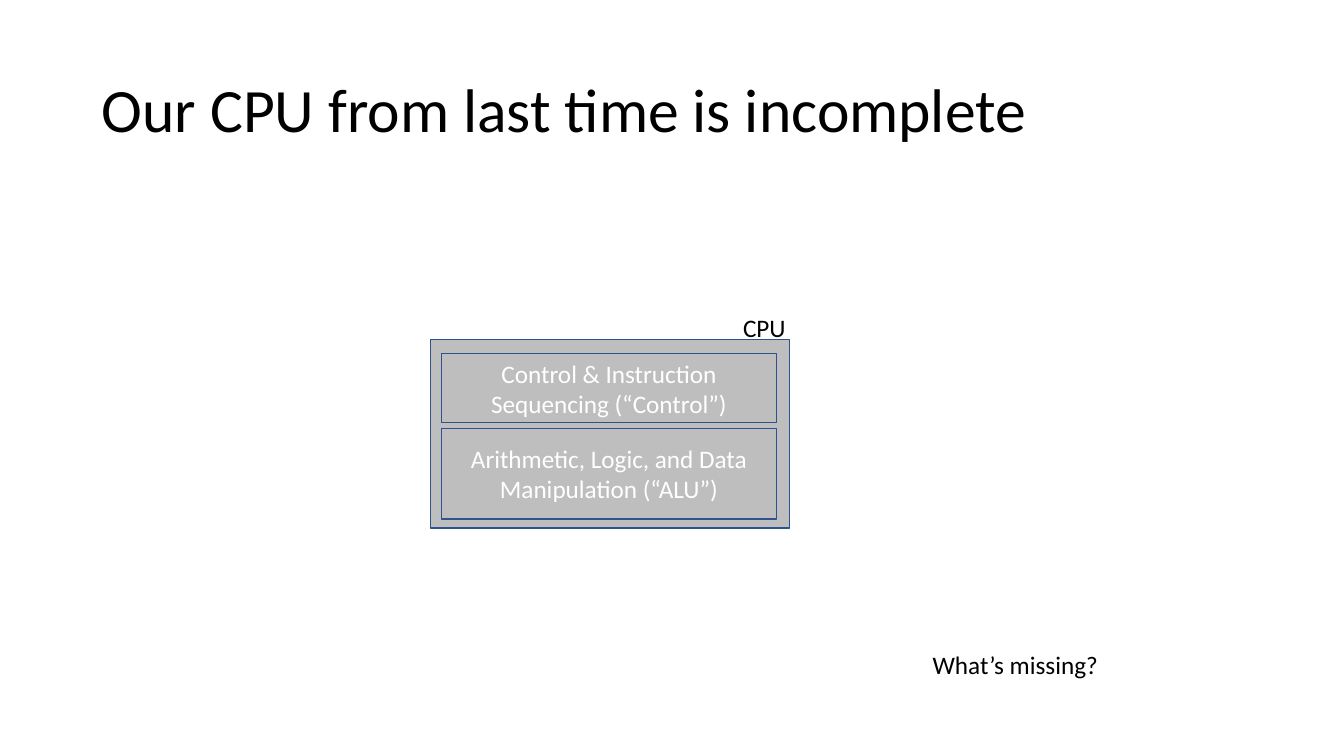
"""Build the slide that shows the incomplete CPU with its control and ALU blocks."""
import pptx
import pptx.dml.color
import pptx.enum.shapes
import pptx.enum.text
import pptx.util

Inches = pptx.util.Inches
RGBColor = pptx.dml.color.RGBColor
Align = pptx.enum.text.PP_ALIGN
Anchor = pptx.enum.text.MSO_ANCHOR

BLACK = RGBColor(0x00, 0x00, 0x00)
WHITE = RGBColor(0xFF, 0xFF, 0xFF)
GRAY = RGBColor(0xBE, 0xBE, 0xBE)
BLUE = RGBColor(0x2E, 0x52, 0x8F)

TITLE = "Our CPU from last time is incomplete"
TITLE_BOX = (0.26, 0.27, 12.59, 1.49)
BLOCKS = [
    ((4.27, 3.37, 3.56, 1.87), []),
    ((4.38, 3.51, 3.32, 0.68), ["Control & Instruction", "Sequencing (“Control”)"]),
    ((4.38, 4.25, 3.32, 0.9), ["Arithmetic, Logic, and Data", "Manipulation (“ALU”)"]),
]
LABELS = [
    ((7.36, 3.08, 0.45, 0.33), "CPU"),
    ((9.24, 6.43, 1.67, 0.33), "What’s missing?"),
]


def write_text(shape, lines, size=18, color=BLACK, align=Align.LEFT,
               anchor=Anchor.MIDDLE, left=0.01, top=0, wrap=True):
    """Write one paragraph per line with the given format."""
    frame = shape.text_frame
    frame.text = "\n".join(lines)
    frame.word_wrap = wrap
    frame.auto_size = pptx.enum.text.MSO_AUTO_SIZE.NONE
    frame.vertical_anchor = anchor
    frame.margin_left, frame.margin_top = Inches(left), Inches(top)
    frame.margin_right = frame.margin_bottom = 0
    for paragraph in frame.paragraphs:
        paragraph.alignment = align
        paragraph.line_spacing = 1.0
        for run in paragraph.runs:
            run.font.name = "Calibri"
            run.font.size = pptx.util.Pt(size)
            run.font.color.rgb = color


def add_block(slide, box, lines):
    """Add a gray block with a blue outline and centred white text."""
    block = slide.shapes.add_shape(
        pptx.enum.shapes.MSO_SHAPE.RECTANGLE, *map(Inches, box))
    block.shadow.inherit = False
    block.fill.solid()
    block.fill.fore_color.rgb = GRAY
    block.line.color.rgb = BLUE
    block.line.width = pptx.util.Pt(1)
    if lines:
        write_text(block, lines, color=WHITE, align=Align.CENTER, left=0)


def main():
    """Assemble and save the slide."""
    presentation = pptx.Presentation()
    presentation.slide_width = Inches(13.33)
    presentation.slide_height = Inches(7.5)
    slide = presentation.slides.add_slide(presentation.slide_layouts[5])

    title = slide.shapes.title
    title.left, title.top, title.width, title.height = map(Inches, TITLE_BOX)
    write_text(title, [TITLE], size=44, anchor=Anchor.TOP, left=0.75, top=0.43)

    for box, lines in BLOCKS:
        add_block(slide, box, lines)
    for box, text in LABELS:
        label = slide.shapes.add_textbox(*map(Inches, box))
        write_text(label, [text], wrap=False)

    presentation.save("out.pptx")


if __name__ == "__main__":
    main()
